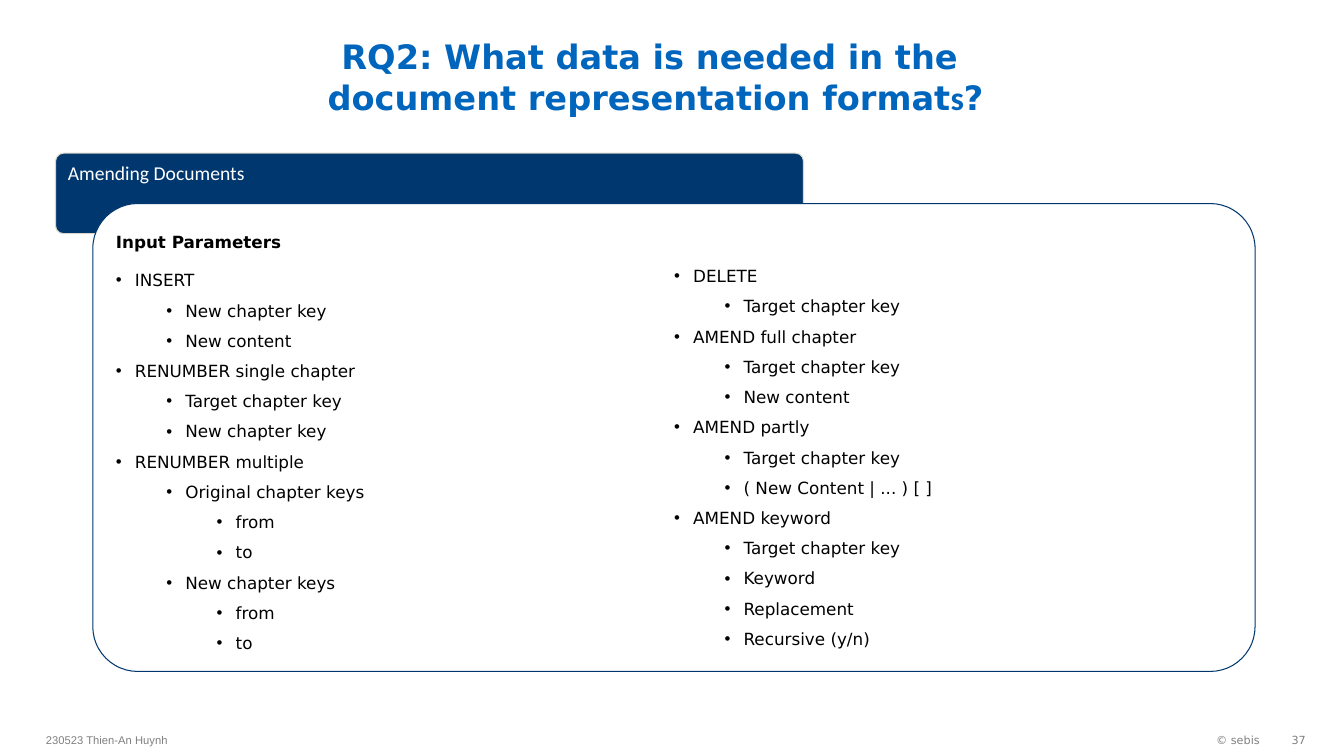
from dataclasses import dataclass

import pptx
import pptx.dml.color
import pptx.enum.shapes
import pptx.enum.text
import pptx.oxml.xmlchemy
import pptx.util
from lxml import etree
from pptx.util import Cm, Pt

Align = pptx.enum.text.PP_ALIGN
Anchor = pptx.enum.text.MSO_ANCHOR


@dataclass(frozen=True)
class Theme:
    title: str = "0065BD"
    banner: str = "00376F"
    banner_line: str = "DAD7CB"
    white: str = "FFFFFF"
    black: str = "000000"
    footer: str = "808080"
    sans: str = "DejaVu Sans"
    banner_font: str = "Calibri"
    author_font: str = "Arial"
    title_size: int = 24
    banner_size: int = 14
    body_size: int = 12
    footer_size: int = 8


THEME = Theme()

LEFT_ITEMS = [
    (0, "INSERT"),
    (1, "New chapter key"),
    (1, "New content"),
    (0, "RENUMBER single chapter"),
    (1, "Target chapter key"),
    (1, "New chapter key"),
    (0, "RENUMBER multiple"),
    (1, "Original chapter keys"),
    (2, "from"),
    (2, "to"),
    (1, "New chapter keys"),
    (2, "from"),
    (2, "to"),
]

RIGHT_ITEMS = [
    (0, "DELETE"),
    (1, "Target chapter key"),
    (0, "AMEND full chapter"),
    (1, "Target chapter key"),
    (1, "New content"),
    (0, "AMEND partly"),
    (1, "Target chapter key"),
    (1, "( New Content | ... ) [ ]"),
    (0, "AMEND keyword"),
    (1, "Target chapter key"),
    (1, "Keyword"),
    (1, "Replacement"),
    (1, "Recursive (y/n)"),
]


def rgb(color):
    return pptx.dml.color.RGBColor.from_string(color)


def format_paragraph(paragraph, size, color, font=THEME.sans, bold=False, align=Align.LEFT):
    paragraph.alignment = align
    for run in paragraph.runs:
        run.font.name = font
        run.font.size = Pt(size)
        run.font.bold = bold
        run.font.color.rgb = rgb(color)


def set_bullet(paragraph, level):
    paragraph.level = level
    properties = paragraph._p.get_or_add_pPr()
    properties.set("marL", str(Cm(0.48 + 1.27 * level)))
    properties.set("indent", str(-Cm(0.48)))
    namespace = etree.QName(properties).namespace
    font = etree.SubElement(properties, f"{{{namespace}}}buFont")
    font.set("typeface", THEME.author_font)
    bullet = etree.SubElement(properties, f"{{{namespace}}}buChar")
    bullet.set("char", "•")


def fill_bullets(paragraphs, items):
    for paragraph, (level, text) in zip(paragraphs, items):
        paragraph.text = text
        set_bullet(paragraph, level)
        paragraph.line_spacing = 1.5
        format_paragraph(paragraph, THEME.body_size, THEME.black)


def set_title(slide):
    title = slide.shapes.title
    title.left, title.top, title.width, title.height = Cm(4.52), Cm(0.91), Cm(24), Cm(1.63)
    frame = title.text_frame
    frame.auto_size = pptx.enum.text.MSO_AUTO_SIZE.NONE
    frame.vertical_anchor = Anchor.TOP
    frame.margin_top = frame.margin_bottom = 0
    frame.text = "RQ2: What data is needed in the \ndocument representation format"
    last_line = frame.paragraphs[1]
    for text in ("s", "?"):
        last_line.add_run().text = text
    for paragraph in frame.paragraphs:
        format_paragraph(paragraph, THEME.title_size, THEME.title, bold=True, align=Align.CENTER)
    last_line.runs[1].font.name = THEME.banner_font


def add_rounded_box(slide, left, top, width, height, rounding, fill, line):
    shape = slide.shapes.add_shape(
        pptx.enum.shapes.MSO_SHAPE.ROUNDED_RECTANGLE, left, top, width, height
    )
    shape.shadow.inherit = False
    shape.adjustments[0] = rounding
    shape.fill.solid()
    shape.fill.fore_color.rgb = rgb(fill)
    shape.line.color.rgb = rgb(line)
    shape.line.width = Pt(0.75)
    return shape


def add_banner(slide):
    banner = add_rounded_box(slide, Cm(1.4), Cm(3.86), Cm(18.85), Cm(2.03), 0.1,
                             THEME.banner, THEME.banner_line)
    frame = banner.text_frame
    frame.vertical_anchor = Anchor.TOP
    frame.text = "Amending Documents"
    format_paragraph(frame.paragraphs[0], THEME.banner_size, THEME.white, THEME.banner_font)


def add_panel(slide):
    panel = add_rounded_box(slide, Cm(2.34), Cm(5.13), Cm(29.29), Cm(11.79), 0.096,
                            THEME.white, THEME.banner)
    frame = panel.text_frame
    frame.vertical_anchor = Anchor.MIDDLE
    frame.text = "Input Parameters"
    heading = frame.paragraphs[0]
    heading.line_spacing = 1.5
    heading.space_after = Pt(5.5)
    format_paragraph(heading, THEME.body_size, THEME.black, bold=True)
    fill_bullets([frame.add_paragraph() for item in LEFT_ITEMS], LEFT_ITEMS)


def add_right_column(slide):
    column = slide.shapes.add_textbox(Cm(16.74), Cm(6.32), Cm(7.01), Cm(10.26))
    frame = column.text_frame
    frame.word_wrap = True
    frame.margin_right = 0
    paragraphs = [frame.paragraphs[0]] + [frame.add_paragraph() for item in RIGHT_ITEMS[1:]]
    fill_bullets(paragraphs, RIGHT_ITEMS)


def add_footer(slide, text, left, width, font=THEME.sans, align=Align.RIGHT):
    footer = slide.shapes.add_textbox(left, Cm(18.25), width, Cm(0.8))
    frame = footer.text_frame
    frame.word_wrap = True
    frame.vertical_anchor = Anchor.MIDDLE
    frame.text = text
    format_paragraph(frame.paragraphs[0], THEME.footer_size, THEME.footer, font, align=align)
    return footer


def main():
    presentation = pptx.Presentation()
    presentation.slide_width = Cm(33.87)
    presentation.slide_height = Cm(19.05)
    slide = presentation.slides.add_slide(presentation.slide_layouts[5])
    set_title(slide)
    add_banner(slide)
    add_panel(slide)
    add_right_column(slide)
    add_footer(slide, "230523 Thien-An Huynh", Cm(0.91), Cm(16), THEME.author_font, Align.LEFT)
    add_footer(slide, "© sebis", Cm(26.06), Cm(5.94))
    page_number = add_footer(slide, "37", Cm(32), Cm(0.91))
    page_number.text_frame.margin_right = 0
    presentation.save("out.pptx")


if __name__ == "__main__":
    main()
